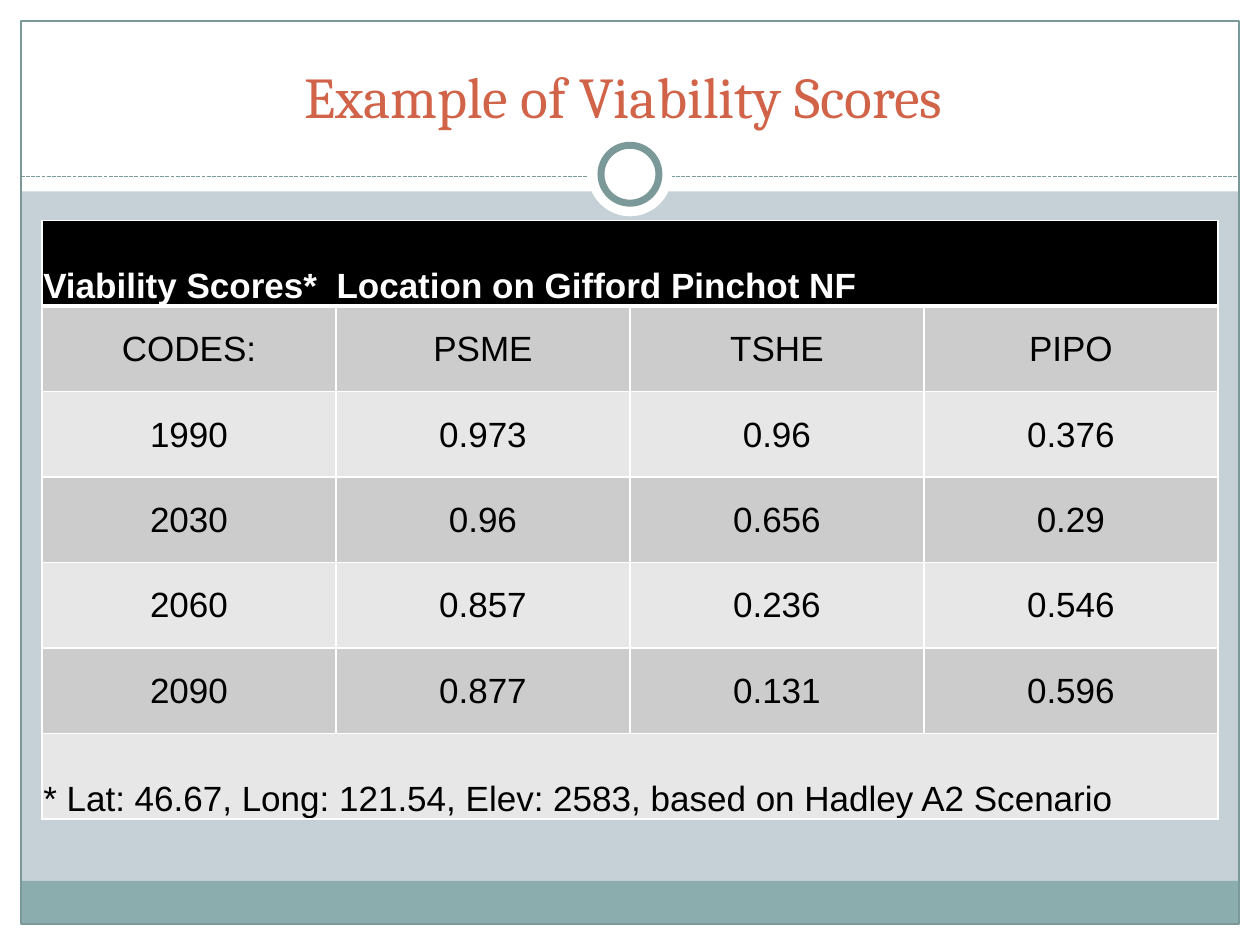
from pptx import Presentation
from pptx.dml.color import RGBColor
from pptx.enum.dml import MSO_LINE_DASH_STYLE as Dash
from pptx.enum.shapes import MSO_CONNECTOR as Connector, MSO_SHAPE as Shape
from pptx.enum.text import MSO_ANCHOR as Anchor, PP_ALIGN as Align
from pptx.oxml.ns import qn
from pptx.util import Inches, Pt
from lxml.etree import SubElement

COLORS = {
    "backdrop": "C5D1D7", "paper": "FFFFFF", "footer": "8CADAE", "rule": "7C999A",
    "title": "D16349", "header": "000000", "text": "000000",
    "dark band": "CCCCCC", "light band": "E7E7E7",
}
COLUMNS, ROWS = 60, 45  # grid over the slide; one unit is a sixth of an inch

HEADING = "Viability Scores*  Location on Gifford Pinchot NF"
SCORES = [
    ["CODES:", "PSME", "TSHE", "PIPO"],
    ["1990", "0.973", "0.96", "0.376"],
    ["2030", "0.96", "0.656", "0.29"],
    ["2060", "0.857", "0.236", "0.546"],
    ["2090", "0.877", "0.131", "0.596"],
]
FOOTNOTE = "* Lat: 46.67, Long: 121.54, Elev: 2583, based on Hadley A2 Scenario"


def rgb(name):
    return RGBColor.from_string(COLORS[name])


class SlideBuilder:
    """Holds the slide and places elements by grid columns and rows."""

    def __init__(self, deck):
        self.unit_x = deck.slide_width / COLUMNS
        self.unit_y = deck.slide_height / ROWS
        self.slide = deck.slides.add_slide(deck.slide_layouts[6])
        self.slide.background.fill.solid()
        self.slide.background.fill.fore_color.rgb = rgb("backdrop")

    def place(self, x, y, width, height):
        return (round(x * self.unit_x), round(y * self.unit_y),
                round(width * self.unit_x), round(height * self.unit_y))

    def shape(self, kind, box, fill=None, line_width=0):
        shape = self.slide.shapes.add_shape(kind, *self.place(*box))
        shape.shadow.inherit = False
        if fill:
            shape.fill.solid()
            shape.fill.fore_color.rgb = rgb(fill)
        else:
            shape.fill.background()
        if line_width:
            shape.line.color.rgb = rgb("rule")
            shape.line.width = Pt(line_width)
        else:
            shape.line.fill.background()

    def dashed_rule(self, x1, x2, y):
        rule = self.slide.shapes.add_connector(
            Connector.STRAIGHT, *self.place(x1, y, x2, y))
        rule.line.color.rgb = rgb("rule")
        rule.line.width = Pt(0.75)
        rule.line.dash_style = Dash.SQUARE_DOT
        SubElement(rule._element.spPr, qn("a:effectLst"))

    def set_text(self, frame, text, font, size, color, align, bold=False):
        paragraph = frame.paragraphs[0]
        paragraph.text = text
        paragraph.alignment = align
        paragraph.font.name = font
        paragraph.font.size = Pt(size)
        paragraph.font.bold = bold
        paragraph.font.color.rgb = rgb(color)

    def title(self, text, box):
        frame = self.slide.shapes.add_textbox(*self.place(*box)).text_frame
        frame.word_wrap = True
        frame.vertical_anchor = Anchor.BOTTOM
        self.set_text(frame, text, "Cambria", 33, "title", Align.CENTER)

    def borders(self, cell, top=1, bottom=1):
        properties = cell._tc.get_or_add_tcPr()
        for side, width in (("L", 1), ("R", 1), ("T", top), ("B", bottom)):
            line = SubElement(properties, qn(f"a:ln{side}"), w=str(Pt(width)))
            fill = SubElement(line, qn("a:solidFill"))
            SubElement(fill, qn("a:srgbClr"), val=COLORS["paper"])

    def score_table(self, box):
        """Score rows between a heading and a footnote that span all columns."""
        columns = len(SCORES[0])
        spanning = [""] * (columns - 1)
        rows = [[HEADING, *spanning], *SCORES, [FOOTNOTE, *spanning]]
        last = len(rows) - 1
        table = self.slide.shapes.add_table(
            len(rows), columns, *self.place(*box)).table
        table.first_row = table.horz_banding = False
        for r, values in enumerate(rows):
            heading, wide = r == 0, r in (0, last)
            fill = "header" if heading else "dark band" if r % 2 else "light band"
            for c, value in enumerate(values):
                cell = table.cell(r, c)
                self.borders(cell, top=3 if r == 1 else 1, bottom=3 if heading else 1)
                cell.fill.solid()
                cell.fill.fore_color.rgb = rgb(fill)
                cell.margin_left = cell.margin_right = cell.margin_top = Inches(0.01)
                cell.margin_bottom = 0
                cell.vertical_anchor = Anchor.BOTTOM if wide else Anchor.MIDDLE
                self.set_text(cell.text_frame, value, "Arial", 20,
                              "paper" if heading else "text",
                              Align.LEFT if wide else Align.CENTER, heading)
            if wide:
                table.cell(r, 0).merge(table.cell(r, columns - 1))


def main():
    deck = Presentation()
    deck.slide_width, deck.slide_height = Inches(10), Inches(7.5)
    page = SlideBuilder(deck)

    margins = [(0, 44, 60, 1), (0, 0, 60, 9.12), (0, 0, 1, 45), (59, 0, 1, 45)]
    for margin in margins:
        page.shape(Shape.RECTANGLE, margin, "paper")
    page.shape(Shape.RECTANGLE, (1, 41.95, 58, 2.05), "footer")
    page.shape(Shape.RECTANGLE, (1, 1, 58, 43), line_width=0.75)
    page.dashed_rule(1, 59, 8.4)
    page.shape(Shape.OVAL, (28, 6.3, 4, 4), "paper")
    page.shape(Shape.OVAL, (28.62, 6.92, 2.76, 2.76), "paper", line_width=4)

    page.title("Example of Viability Scores ", (2, 1.5, 56, 5))
    page.score_table((2, 10.5, 56, 28.5))
    deck.save("out.pptx")


if __name__ == "__main__":
    main()
